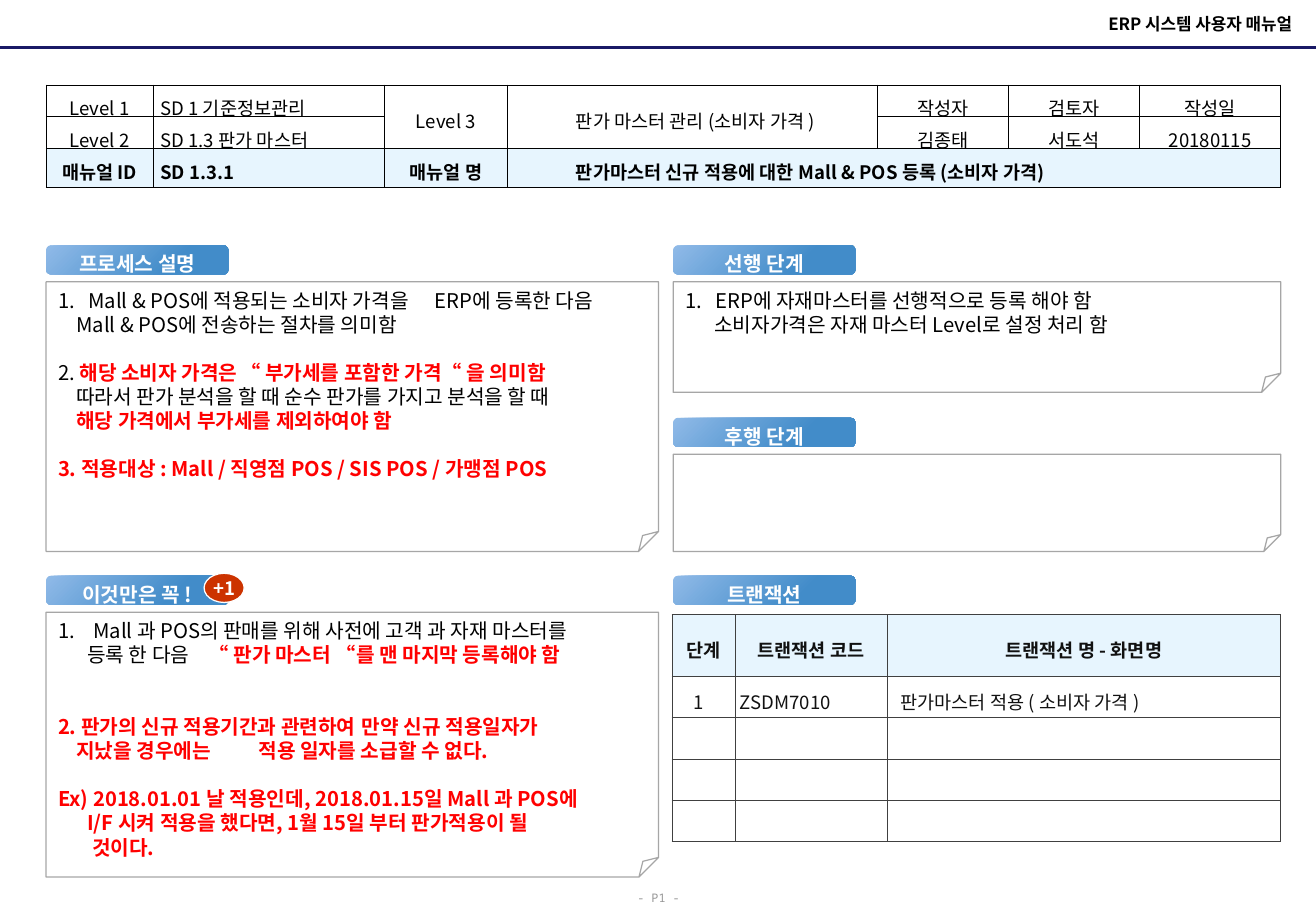
from pptx import Presentation
from pptx.dml.color import RGBColor
from pptx.enum.shapes import MSO_CONNECTOR, MSO_SHAPE
from pptx.enum.text import MSO_ANCHOR, PP_ALIGN
from pptx.oxml import parse_xml
from pptx.oxml.ns import nsdecls, qn
from pptx.util import Inches, Pt

BLACK = RGBColor(0x00, 0x00, 0x00)
INK = RGBColor(0x11, 0x11, 0x11)
RED = RGBColor(0xFF, 0x00, 0x00)
WHITE = RGBColor(0xFF, 0xFF, 0xFF)
GRAY = RGBColor(0x96, 0x96, 0x96)
BOX_LINE = RGBColor(0xA6, 0xA6, 0xA6)
NAVY = RGBColor(0x19, 0x19, 0x66)
PALE_BLUE = RGBColor(0xE7, 0xF5, 0xFE)
TAB_LIGHT = RGBColor(0x90, 0xBA, 0xE8)
TAB_DARK = RGBColor(0x42, 0x8C, 0xC9)
BADGE_RED = RGBColor(0xCC, 0x33, 0x00)
SANS, MONO = "Noto Sans CJK KR", "Noto Sans Mono"
LEFT, CENTER, RIGHT = PP_ALIGN.LEFT, PP_ALIGN.CENTER, PP_ALIGN.RIGHT
GAP = 14

LEFT_X, RIGHT_X = 0.38, 5.54
SECTION_TABS = [
    ("프로세스 설명", LEFT_X, 2.02),
    ("선행 단계", RIGHT_X, 2.02),
    ("후행 단계", RIGHT_X, 3.44),
    ("트랜잭션", RIGHT_X, 4.74),
    ("이것만은 꼭 !", LEFT_X, 4.74),
]

PROCESS = [
    ("1.", 0.25, 0, 3.1, [("Mall & POS에 적용되는 소비자 가격을\tERP에 등록한 다음", BLACK)]),
    ("", 0.15, 0, 0, [("Mall & POS에 전송하는 절차를 의미함", BLACK)]),
    ("", 0, GAP, 1.69, [("2. ", BLACK), ("해당 소비자 가격은\t“ 부가세를 포함한 가격“ 을 의미함", RED)]),
    ("", 0.15, 0, 0, [("따라서 판가 분석을 할 때 순수 판가를 가지고 분석을 할 때", BLACK)]),
    ("", 0.15, 0, 0, [("해당 가격에서 부가세를 제외하여야 함", RED)]),
    ("", 0, GAP, 0, [("3. 적용대상 : Mall / 직영점 POS / SIS POS / 가맹점 POS", RED)]),
]
PRECEDING = [
    ("1.", 0.25, 0, 0, [("ERP에 자재마스터를 선행적으로 등록 해야 함", BLACK)]),
    ("", 0.24, 0, 0, [("소비자가격은 자재 마스터 Level로 설정 처리 함", BLACK)]),
]
MUST_KNOW = [
    ("1.", 0.29, 0, 0, [("Mall 과 POS의 판매를 위해 사전에 고객 과 자재 마스터를", BLACK)]),
    ("", 0.24, 0, 1.24, [("등록 한 다음\t", BLACK), ("“ 판가 마스터 “를 맨 마지막 등록해야 함", RED)]),
    ("", 0, 2 * GAP, 2.7, [("2. 판가의 신규 적용기간과 관련하여\t만약 신규 적용일자가", RED)]),
    ("", 0.15, 0, 1.4, [("지났을 경우에는\t적용 일자를 소급할 수 없다.", RED)]),
    ("", 0, GAP, 0, [("Ex) 2018.01.01 날 적용인데, 2018.01.15일 Mall 과 POS에", RED)]),
    ("", 0.24, 0, 0, [("I/F 시켜 적용을 했다면, 1월 15일 부터 판가적용이 될", RED)]),
    ("", 0.28, 0, 0, [("것이다.", RED)]),
]
NOTES = [
    (PROCESS, LEFT_X, 2.32, 5.04, 2.22, 0.074),
    (PRECEDING, RIGHT_X, 2.32, 5, 0.91, 0.173),
    ([], RIGHT_X, 3.74, 5, 0.8, 0.173),
    (MUST_KNOW, LEFT_X, 5.04, 5.04, 2.18, 0.074),
]

MANUAL_ROWS = [
    ["Level 1", "SD 1 기준정보관리", "Level 3", "판가 마스터 관리 (소비자 가격 )", "작성자", "검토자", "작성일"],
    ["Level 2", "SD 1.3 판가 마스터", "", "", "김종태", "서도석", "20180115"],
    ["매뉴얼 ID", "SD 1.3.1", "매뉴얼 명", "판가마스터 신규 적용에 대한 Mall & POS 등록 (소비자 가격)", "", "", ""],
]
MANUAL = dict(
    rows=MANUAL_ROWS, at=(0.38, 0.7), widths=[0.88, 1.9, 1.02, 3.04, 1.08, 1.08, 1.16],
    heights=[0.26, 0.26, 0.32], merges=[(0, 2, 1, 2), (0, 3, 1, 3), (2, 3, 2, 6)],
    shaded=2, left_columns={1: 0, 3: 0.5}, margins=(0.06, 0.01), border="000000", color=BLACK)
TRANSACTION_ROWS = [
    ["단계", "트랜잭션 코드", "트랜잭션 명 - 화면명"],
    ["1", "ZSDM7010", "판가마스터 적용 ( 소비자 가격 )"],
] + [[""] * 3 for _ in range(3)]
TRANSACTIONS = dict(
    rows=TRANSACTION_ROWS, at=(5.53, 5.06), widths=[0.52, 1.25, 3.24],
    heights=[0.51] + [0.34] * 4, merges=[], shaded=0, left_columns={0: 0.07, 1: -0.07, 2: 0},
    margins=(0.11, 0.02), border="404040", color=INK)

prs = Presentation()
prs.slide_width, prs.slide_height = Inches(10.83), Inches(7.5)
slide = prs.slides.add_slide(prs.slide_layouts[6])


def add_run(paragraph, text, size, color, bold=False, font=SANS):
    run = paragraph.add_run()
    run.text = text
    for key, value in dict(name=font, size=Pt(size), bold=bold).items():
        setattr(run.font, key, value)
    run.font.color.rgb = color
    props = run._r.get_or_add_rPr()
    props.append(parse_xml(f'<a:ea {nsdecls("a")} typeface="{font}"/>'))


def set_frame(frame, margins, anchor=MSO_ANCHOR.MIDDLE, wrap=True):
    sides = ("margin_left", "margin_top", "margin_right", "margin_bottom")
    for side, value in zip(sides, margins):
        setattr(frame, side, Inches(value))
    frame.vertical_anchor, frame.word_wrap = anchor, wrap


def add_box(kind, at, line=None):
    box = slide.shapes.add_shape(kind, *map(Inches, at))
    box.shadow.inherit = False
    box.fill.background()
    if line is None:
        box.line.fill.background()
    else:
        box.line.color.rgb = line
        box.line.width = Pt(0.75)
    return box


def add_label(text, at, align, size, color, bold, font, spacing, wrap):
    frame = slide.shapes.add_textbox(*map(Inches, at)).text_frame
    set_frame(frame, (0.1, 0.05, 0.1, 0.05), wrap=wrap)
    paragraph = frame.paragraphs[0]
    paragraph.alignment, paragraph.line_spacing = align, spacing
    add_run(paragraph, text, size, color, bold, font)


def add_note(lines, left, top, width, height, fold):
    note = add_box(MSO_SHAPE.FOLDED_CORNER, (left, top, width, height), BOX_LINE)
    geometry = note._element.spPr.find(qn("a:prstGeom"))
    for guides in geometry.findall(qn("a:avLst")):
        geometry.remove(guides)
    geometry.append(parse_xml(
        f'<a:avLst {nsdecls("a")}><a:gd name="adj" fmla="val {round(fold * 100000)}"/></a:avLst>'))
    set_frame(note.text_frame, (0.1, 0.05, 0.1, 0.05), MSO_ANCHOR.TOP)
    for i, (number, indent, before, stop, runs) in enumerate(lines):
        paragraph = note.text_frame.add_paragraph() if i else note.text_frame.paragraphs[0]
        paragraph.alignment = LEFT
        if before:
            paragraph.space_before = Pt(before)
        props = paragraph._p.get_or_add_pPr()
        props.set("marL", str(Inches(indent)))
        props.set("indent", str(Inches(-indent if number else 0)))
        if number:
            props.append(parse_xml(f'<a:buFont {nsdecls("a")} typeface="{SANS}"/>'))
            props.append(parse_xml(f'<a:buAutoNum {nsdecls("a")} type="arabicPeriod"/>'))
        if stop:
            props.append(parse_xml(
                f'<a:tabLst {nsdecls("a")}><a:tab pos="{Inches(stop)}" algn="l"/></a:tabLst>'))
        for text, color in runs:
            add_run(paragraph, text, 12, color, color == RED)


def add_grid(rows, at, widths, heights, merges, shaded, left_columns, margins, border, color):
    size = (sum(widths), sum(heights))
    grid = slide.shapes.add_table(len(rows), len(widths), *map(Inches, at + size)).table
    for column, width in zip(grid.columns, widths):
        column.width = Inches(width)
    for row, height in zip(grid.rows, heights):
        row.height = Inches(height)
    for r, row in enumerate(rows):
        for c, text in enumerate(row):
            cell = grid.cell(r, c)
            side, edge = margins
            heading = r == shaded
            centered = c not in left_columns or (heading and shaded == 0)
            shift = 0 if centered else left_columns[c]
            for key, value in dict(margin_left=side + shift, margin_right=side,
                                   margin_top=edge, margin_bottom=edge).items():
                setattr(cell, key, Inches(value))
            cell.vertical_anchor = MSO_ANCHOR.MIDDLE
            cell.fill.solid()
            cell.fill.fore_color.rgb = PALE_BLUE if heading else WHITE
            paragraph = cell.text_frame.paragraphs[0]
            paragraph.alignment = CENTER if centered else LEFT
            paragraph.line_spacing = 1.3
            add_run(paragraph, text, 11, color, heading)
            props = cell._tc.get_or_add_tcPr()
            for i, name in enumerate(("lnL", "lnR", "lnT", "lnB")):
                props.insert(i, parse_xml(
                    f'<a:{name} {nsdecls("a")} w="{Pt(0.5)}"><a:solidFill>'
                    f'<a:srgbClr val="{border}"/></a:solidFill></a:{name}>'))
    for top, left, bottom, right in merges:
        grid.cell(top, left).merge(grid.cell(bottom, right))


add_label("- P1 -", (5.14, 7.25, 0.56, 0.25), CENTER, 7, GRAY, False, MONO, 1.3, False)
add_label("ERP 시스템 사용자 매뉴얼", (6.04, 0.06, 4.69, 0.27), RIGHT, 10, BLACK, True, SANS, 1, True)
rule = slide.shapes.add_connector(MSO_CONNECTOR.STRAIGHT, 0, Inches(0.39), prs.slide_width, Inches(0.39))
rule.line.color.rgb, rule.line.width = NAVY, Pt(1.5)
rule._element.spPr.append(parse_xml(f'<a:effectLst {nsdecls("a")}/>'))

for title, left, top in SECTION_TABS:
    tab = add_box(MSO_SHAPE.ROUNDED_RECTANGLE, (left, top, 1.5, 0.24))
    tab.fill.gradient()
    tab.fill.gradient_angle = 315
    for stop, color, position in zip(tab.fill.gradient_stops, (TAB_LIGHT, TAB_DARK), (0, 0.7)):
        stop.color.rgb, stop.position = color, position
    set_frame(tab.text_frame, (0, 0, 0, 0.04))
    paragraph = tab.text_frame.paragraphs[0]
    paragraph.alignment, paragraph.line_spacing = CENTER, 1.5
    add_run(paragraph, title, 12, WHITE, True)

for note in NOTES:
    add_note(*note)
for grid in (MANUAL, TRANSACTIONS):
    add_grid(**grid)

badge = add_box(MSO_SHAPE.OVAL, (1.68, 4.72, 0.33, 0.24), WHITE)
badge.fill.solid()
badge.fill.fore_color.rgb = BADGE_RED
set_frame(badge.text_frame, (0.1, 0.05, 0.1, 0.05), wrap=False)
badge.text_frame.paragraphs[0].alignment = CENTER
add_run(badge.text_frame.paragraphs[0], "+1", 11, WHITE, True)
prs.save("out.pptx")
